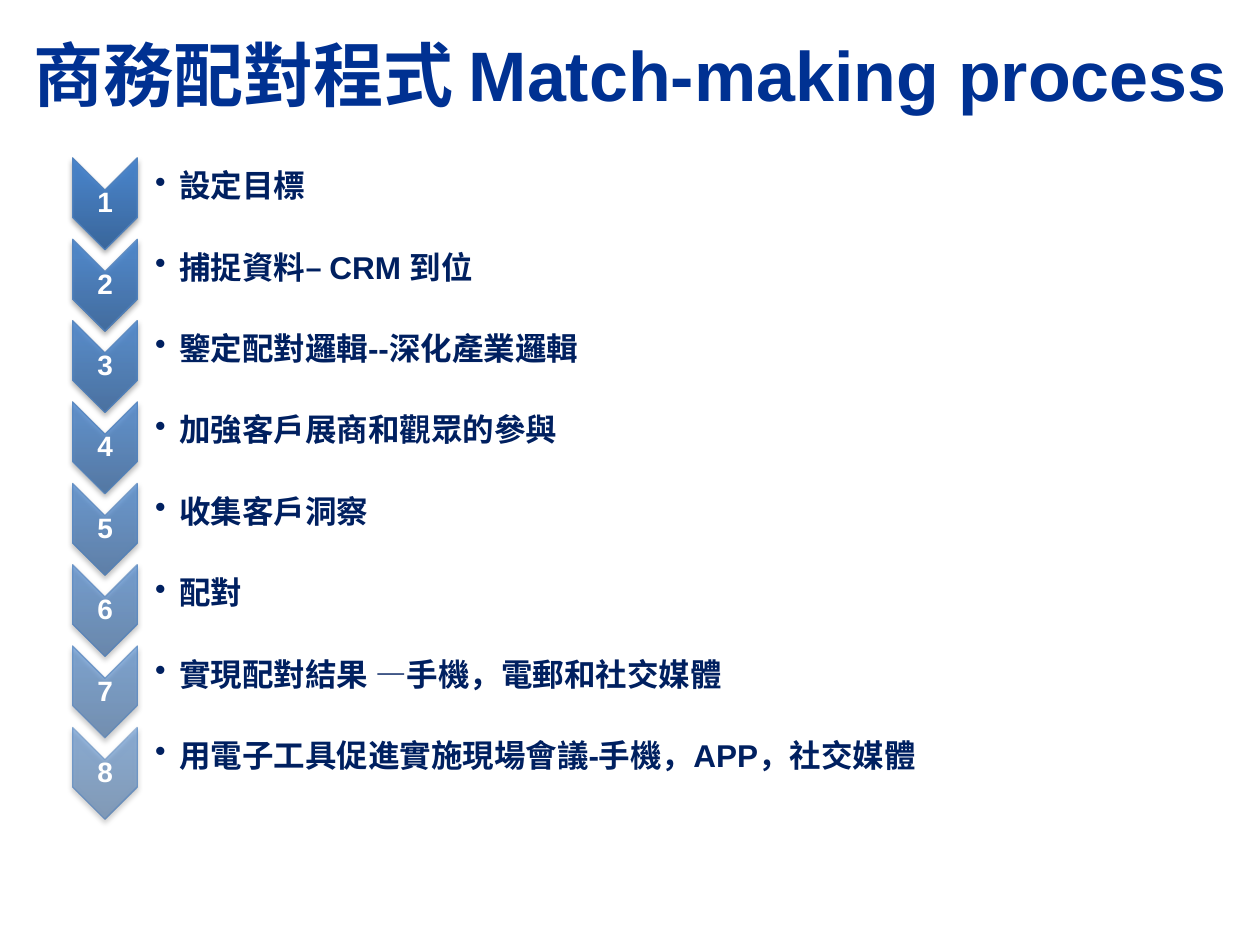
from dataclasses import dataclass

from lxml import etree
from pptx import Presentation
from pptx import util as u
from pptx.dml.color import RGBColor
from pptx.enum import shapes, text
from pptx.oxml.ns import qn


@dataclass(frozen=True)
class Theme:
    font: str = "Arial"
    title_color: str = "003192"
    step_color: str = "002060"
    number_color: str = "FFFFFF"
    outline: str = "4F81BD"
    shadow: str = "000000"
    gradient: tuple = ((0, "2F5F99"), (80, "3D7CC7"), (100, "3A7CCB"))
    title_size: int = 40
    step_size: int = 18
    number_size: int = 16


def add_child(parent, tag, **attributes):
    child = etree.SubElement(parent, qn(tag))
    for name, value in attributes.items():
        child.set(name, str(value))
    return child


def add_color(parent, color, opacity):
    add_child(add_child(parent, "a:srgbClr", val=color),
              "a:alpha", val=round(opacity * 1000))


class ProcessSlide:
    def __init__(self, presentation, theme):
        self.theme = theme
        self.slide = presentation.slides.add_slide(presentation.slide_layouts[5])

    def style(self, paragraph, size, color):
        font = paragraph.font
        font.name = self.theme.font
        font.size = u.Pt(size)
        font.bold = True
        font.color.rgb = RGBColor.from_string(color)

    def title(self, wording, width, height):
        heading = self.slide.shapes.title
        heading.left, heading.top = u.Cm(0), u.Cm(0)
        heading.width, heading.height = u.Cm(width), u.Cm(height)
        frame = heading.text_frame
        frame.text = wording
        frame.vertical_anchor = text.MSO_ANCHOR.MIDDLE
        frame.paragraphs[0].alignment = text.PP_ALIGN.CENTER
        self.style(frame.paragraphs[0], self.theme.title_size, self.theme.title_color)

    def chevron(self, left, top, width, height, opacity):
        arrow = self.slide.shapes.add_shape(
            shapes.MSO_SHAPE.CHEVRON, u.Cm(left), u.Cm(top), u.Cm(width), u.Cm(height))
        arrow.rotation = 90
        arrow.fill.gradient()
        arrow.fill.gradient_angle = 90
        arrow.line.width = u.Pt(0.75)
        arrow.line.color.rgb = RGBColor.from_string(self.theme.outline)
        arrow.shadow.inherit = False

        # Translucent gradient that stays upright on the turned shape
        properties = arrow.fill._xPr
        gradient = properties.find(qn("a:gradFill"))
        gradient.set("rotWithShape", "0")
        stops = gradient.find(qn("a:gsLst"))
        for stop in list(stops):
            stops.remove(stop)
        for position, color in self.theme.gradient:
            add_color(add_child(stops, "a:gs", pos=position * 1000), color, opacity)

        # Outline opacity and soft shadow
        outline_color = properties.find(qn("a:ln")).find(".//" + qn("a:srgbClr"))
        add_child(outline_color, "a:alpha", val=round(opacity * 1000))
        shadow = add_child(properties.find(qn("a:effectLst")), "a:outerShdw",
                           blurRad=u.Pt(3.1), dist=u.Pt(1.8), dir=5400000,
                           rotWithShape=0)
        add_color(shadow, self.theme.shadow, 35)

    def label(self, wording, left, top, width, height, size, color,
              inset=0.03, bullet=False):
        box = self.slide.shapes.add_textbox(
            u.Cm(left), u.Cm(top), u.Cm(width), u.Cm(height))
        frame = box.text_frame
        frame.word_wrap = True
        frame.vertical_anchor = text.MSO_ANCHOR.MIDDLE
        frame.margin_left = u.Cm(inset)
        frame.margin_top = frame.margin_right = frame.margin_bottom = u.Cm(0.03)
        paragraph = frame.paragraphs[0]
        paragraph.text = wording
        paragraph.line_spacing = 0.9
        if bullet:
            paragraph.level = 1
            settings = paragraph._p.get_or_add_pPr()
            settings.set("marL", str(u.Cm(0.48)))
            settings.set("indent", str(u.Cm(-0.48)))
            add_child(settings, "a:buChar", char="•")
        else:
            paragraph.alignment = text.PP_ALIGN.CENTER
        self.style(paragraph, size, color)


def main():
    theme = Theme()
    presentation = Presentation()
    presentation.slide_width, presentation.slide_height = u.Cm(25.4), u.Cm(19.05)
    process = ProcessSlide(presentation, theme)
    process.title("商務配對程式 Match-making process", 25.4, 2.97)

    steps = [
        "設定目標",
        "捕捉資料– CRM 到位",
        "鑒定配對邏輯--深化產業邏輯",
        "加強客戶展商和觀眾的參與",
        "收集客戶洞察",
        "配對",
        "實現配對結果 —手機，電郵和社交媒體",
        "用電子工具促進實施現場會議-手機，APP，社交媒體",
    ]
    first_top, pitch = 3.46, 1.64
    strongest, faintest = 90, 50
    fade = (strongest - faintest) / (len(steps) - 1)

    # One numbered chevron and one bullet line per step
    for index, step in enumerate(steps):
        top = first_top + index * pitch
        process.chevron(1.19, top, 1.85, 1.3, strongest - index * fade)
        process.label(str(index + 1), 1.47, top + 0.37, 1.3, 0.56,
                      theme.number_size, theme.number_color)
        process.label(step, 2.77, top - 0.22, 20.24, 1.09,
                      theme.step_size, theme.step_color, inset=0.36, bullet=True)

    presentation.save("out.pptx")


if __name__ == "__main__":
    main()
